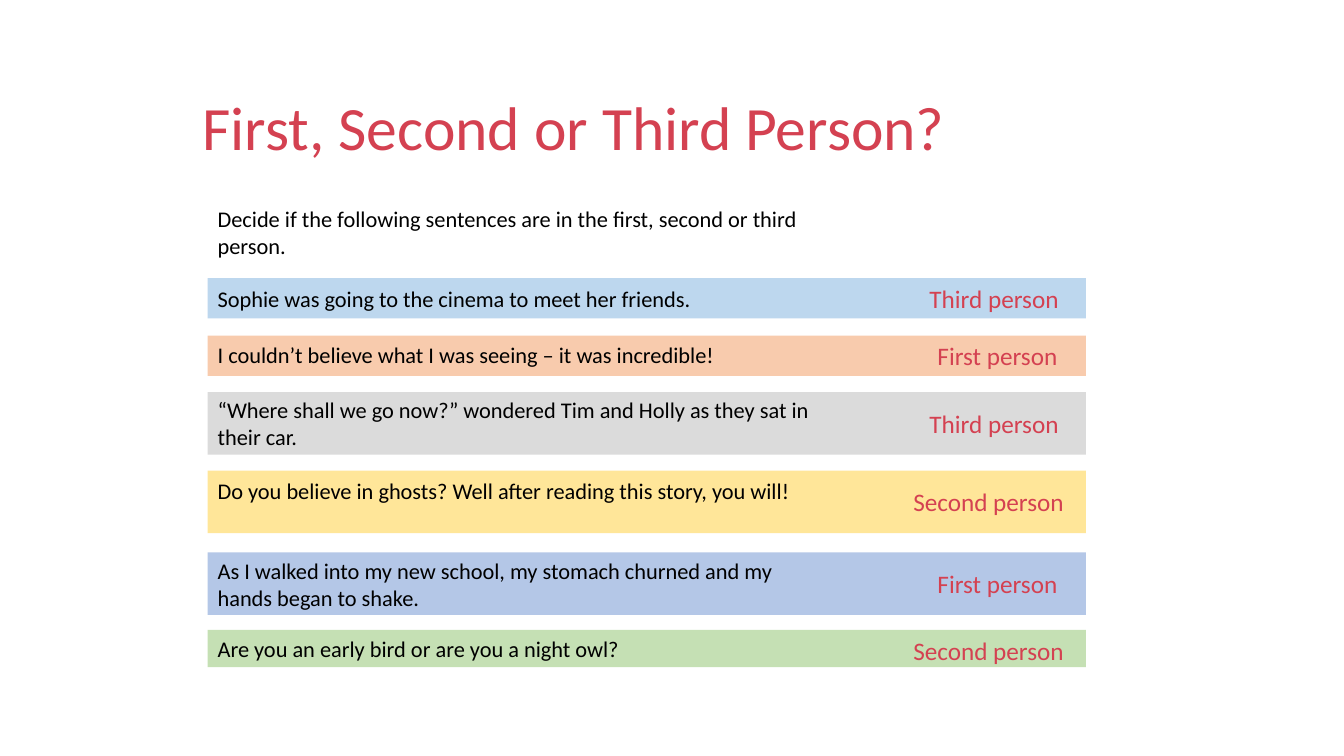
import dataclasses

import pptx
import pptx.dml.color
import pptx.enum.shapes
import pptx.enum.text
import pptx.util

Inches = pptx.util.Inches

LEFT = 2.06
BAR_WIDTH = 8.71
TEXT_WIDTH = 6.15
ANSWER_HEIGHT = 0.4
BLACK = "000000"
RED = "D44151"


@dataclasses.dataclass
class Question:
    top: float
    height: float
    text_top: float
    fill: str
    sentence: str
    answer: str


# Left edge and width of each answer label
ANSWER_SPANS = {
    "First person": (9.2, 1.57),
    "Second person": (8.96, 1.78),
    "Third person": (9.12, 1.65),
}

QUESTIONS = [
    Question(2.76, 0.4, 2.78, "BDD7EE",
             "Sophie was going to the cinema to meet her friends.", "Third person"),
    Question(3.33, 0.4, 3.34, "F8CBAD",
             "I couldn’t believe what I was seeing – it was incredible!", "First person"),
    Question(3.89, 0.62, 3.88, "DBDBDB",
             "“Where shall we go now?” wondered Tim and Holly as they sat in their car.",
             "Third person"),
    Question(4.67, 0.62, 4.68, "FFE699",
             "Do you believe in ghosts? Well after reading this story, you will!",
             "Second person"),
    Question(5.48, 0.62, 5.48, "B4C7E7",
             "As I walked into my new school, my stomach churned and my hands began to shake.",
             "First person"),
    Question(6.25, 0.37, 6.25, "C5E0B4",
             "Are you an early bird or are you a night owl?", "Second person"),
]


def rgb(value: str) -> pptx.dml.color.RGBColor:
    return pptx.dml.color.RGBColor.from_string(value)


def add_text(s, text: str, left: float, top: float, width: float, height: float,
             size: int, color: str):
    sp = s.shapes.add_textbox(Inches(left), Inches(top), Inches(width), Inches(height))
    tf = sp.text_frame
    tf.word_wrap = True
    r = tf.paragraphs[0].add_run()
    r.text = text
    for name, value in {"name": "Calibri", "size": pptx.util.Pt(size)}.items():
        setattr(r.font, name, value)
    r.font.color.rgb = rgb(color)
    return tf


def add_question(s, q: Question) -> None:
    """Draw the coloured bar with its sentence and its answer."""
    sp = s.shapes.add_shape(pptx.enum.shapes.MSO_SHAPE.RECTANGLE, Inches(LEFT),
                            Inches(q.top), Inches(BAR_WIDTH), Inches(q.height))
    sp.shadow.inherit = False
    sp.fill.solid()
    sp.fill.fore_color.rgb = rgb(q.fill)
    sp.line.fill.background()
    add_text(s, q.sentence, LEFT, q.text_top, TEXT_WIDTH, q.height, 16, BLACK)
    left, width = ANSWER_SPANS[q.answer]
    answer_top = q.top + max(0, (q.height - ANSWER_HEIGHT) / 2)
    add_text(s, q.answer, left, answer_top, width, ANSWER_HEIGHT, 18, RED)


def main() -> None:
    prs = pptx.Presentation()
    prs.slide_width, prs.slide_height = Inches(13.33), Inches(7.5)
    s = prs.slides.add_slide(prs.slide_layouts[6])

    title = add_text(s, "First, Second or Third Person?", 1.91, 0.75, 8.99, 1.09, 44, RED)
    title.vertical_anchor = pptx.enum.text.MSO_ANCHOR.MIDDLE
    title.paragraphs[0].line_spacing = 0.9

    add_text(s, "Decide if the following sentences are in the first, second or third person.",
             LEFT, 1.99, TEXT_WIDTH, 0.64, 16, BLACK)
    for q in QUESTIONS:
        add_question(s, q)
    prs.save("out.pptx")


if __name__ == "__main__":
    main()
